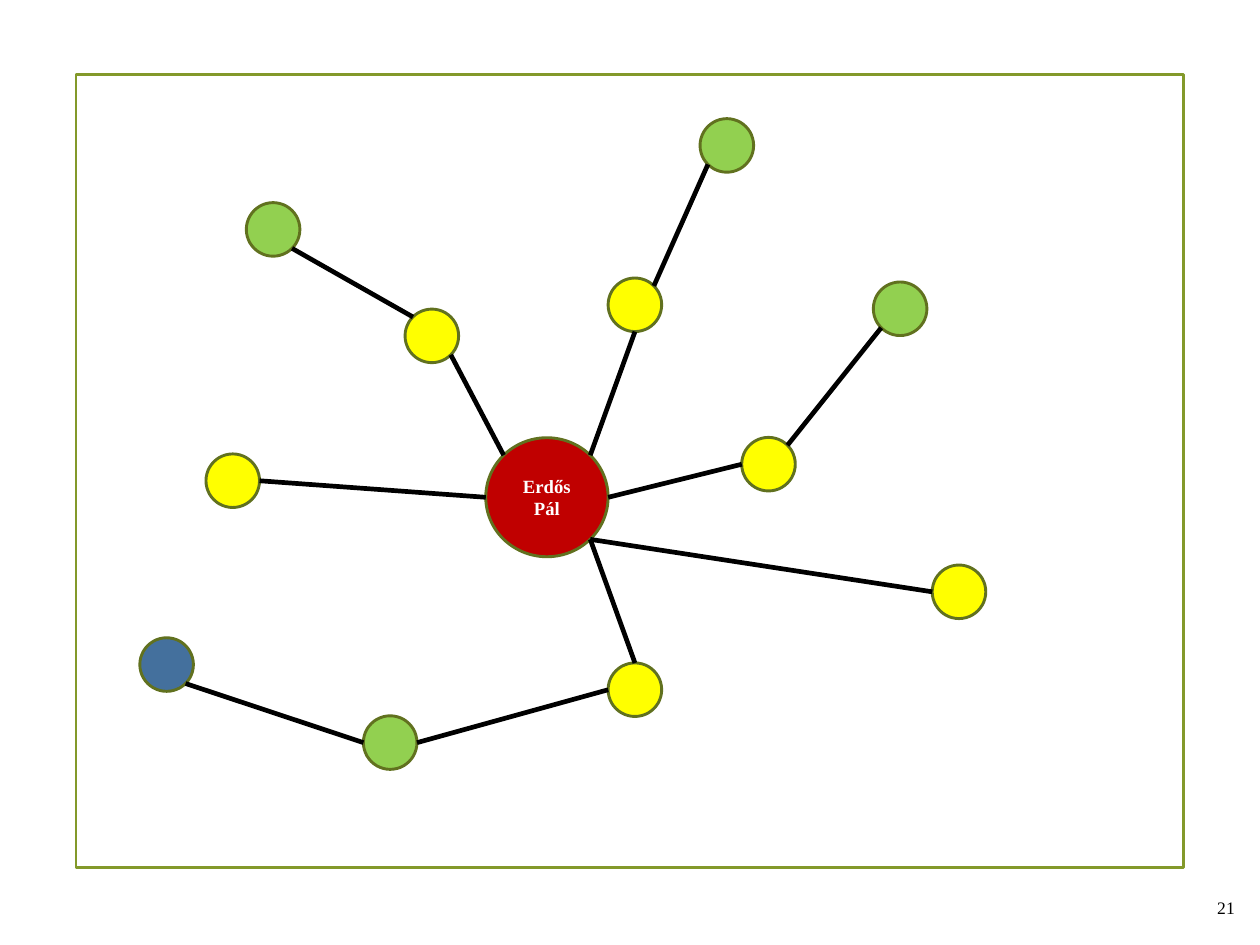
from math import cos, radians, sin

from lxml.etree import SubElement
from pptx import Presentation
from pptx.dml.color import RGBColor
from pptx.enum.shapes import MSO_CONNECTOR, MSO_SHAPE
from pptx.enum.text import MSO_ANCHOR, PP_ALIGN
from pptx.oxml.ns import qn
from pptx.util import Cm, Pt

COLORS = {
    "frame": "83992A", "outline": "61711F", "hub": "C00000", "first": "FFFF00",
    "second": "92D050", "third": "44709D", "edge": "000000",
    "light": "FFFFFF", "dark": "000000",
}
HUB_SIZE = (1.85, 1.8)
NODE_SIZE = (0.81, 0.81)
NODES = {
    "upper left end": (4.13, 3.47, "second"),
    "top end": (10.99, 2.2, "second"),
    "blue end": (2.52, 10.05, "third"),
    "right end": (13.61, 4.67, "second"),
    "lower left": (5.9, 11.23, "second"),
    "top": (9.6, 4.61, "first"),
    "bottom": (9.6, 10.43, "first"),
    "right": (11.62, 7.02, "first"),
    "upper left": (6.53, 5.08, "first"),
    "far right": (14.5, 8.95, "first"),
    "far left": (3.52, 7.27, "first"),
    "hub": (8.27, 7.52, "hub"),
}
ANGLES = {"E": 0, "SE": 45, "S": 90, "W": 180, "NW": 225, "N": 270, "NE": 315}
EDGES = [
    ("hub", "NW", "upper left", "SE"),
    ("hub", "NE", "top", "S"),
    ("top", "NE", "top end", "SW"),
    ("upper left", "NW", "upper left end", "SE"),
    ("bottom", "N", "hub", "SE"),
    ("lower left", "E", "bottom", "W"),
    ("blue end", "SE", "lower left", "W"),
    ("hub", "E", "right", "W"),
    ("right", "NE", "right end", "SW"),
    ("hub", "SE", "far right", "W"),
    ("far left", "E", "hub", "W"),
]
ANGLES["SW"] = 135


def color(name):
    return RGBColor.from_string(COLORS[name])


def write(tf, text, align, **font):
    tf.word_wrap = True
    tf.vertical_anchor = MSO_ANCHOR.MIDDLE
    p = tf.paragraphs[0]
    p.alignment = align
    r = p.add_run()
    r.text = text
    r.font.color.rgb = color(font.pop("color"))
    for name, value in {"name": "Times New Roman", **font}.items():
        setattr(r.font, name, value)


def add_frame(s):
    sp = s.shapes.add_shape(MSO_SHAPE.RECTANGLE, Cm(1.15), Cm(1.13), Cm(16.75), Cm(11.99))
    sp.shadow.inherit = False
    sp.fill.background()
    sp.line.color.rgb = color("frame")
    sp.line.width = Pt(1.25)


def size_of(node):
    return HUB_SIZE if node == "hub" else NODE_SIZE


def add_node(s, node):
    x, y, fill = NODES[node]
    w, h = size_of(node)
    sp = s.shapes.add_shape(MSO_SHAPE.OVAL, Cm(x - w / 2), Cm(y - h / 2), Cm(w), Cm(h))
    sp.shadow.inherit = False
    sp.fill.solid()
    sp.fill.fore_color.rgb = color(fill)
    sp.line.color.rgb = color("outline")
    sp.line.width = Pt(1.25)
    return sp


def rim_point(node, side):
    x, y, _ = NODES[node]
    w, h = size_of(node)
    angle = radians(ANGLES[side])
    return Cm(x + w / 2 * cos(angle)), Cm(y + h / 2 * sin(angle))


def add_edge(s, start, start_side, end, end_side):
    line = s.shapes.add_connector(
        MSO_CONNECTOR.STRAIGHT, *rim_point(start, start_side), *rim_point(end, end_side))
    line.line.color.rgb = color("edge")
    line.line.width = Pt(2)
    SubElement(line._element.spPr, qn("a:effectLst"))


def add_slide_number(s):
    tf = s.shapes.add_textbox(Cm(17.78), Cm(13.18), Cm(1.14), Cm(1.09)).text_frame
    for side in ("left", "top", "right", "bottom"):
        setattr(tf, f"margin_{side}", Cm(0.25))
    write(tf, "21", PP_ALIGN.RIGHT, size=Pt(7.5), color="dark")


def main():
    prs = Presentation()
    prs.slide_width, prs.slide_height = Cm(19.05), Cm(14.29)
    s = prs.slides.add_slide(prs.slide_layouts[6])
    add_frame(s)
    add_slide_number(s)
    ovals = {node: add_node(s, node) for node in NODES}
    write(ovals["hub"].text_frame, "Erdős Pál", PP_ALIGN.CENTER,
          size=Pt(8), bold=True, color="light")
    for edge in EDGES:
        add_edge(s, *edge)
    prs.save("out.pptx")


if __name__ == "__main__":
    main()
